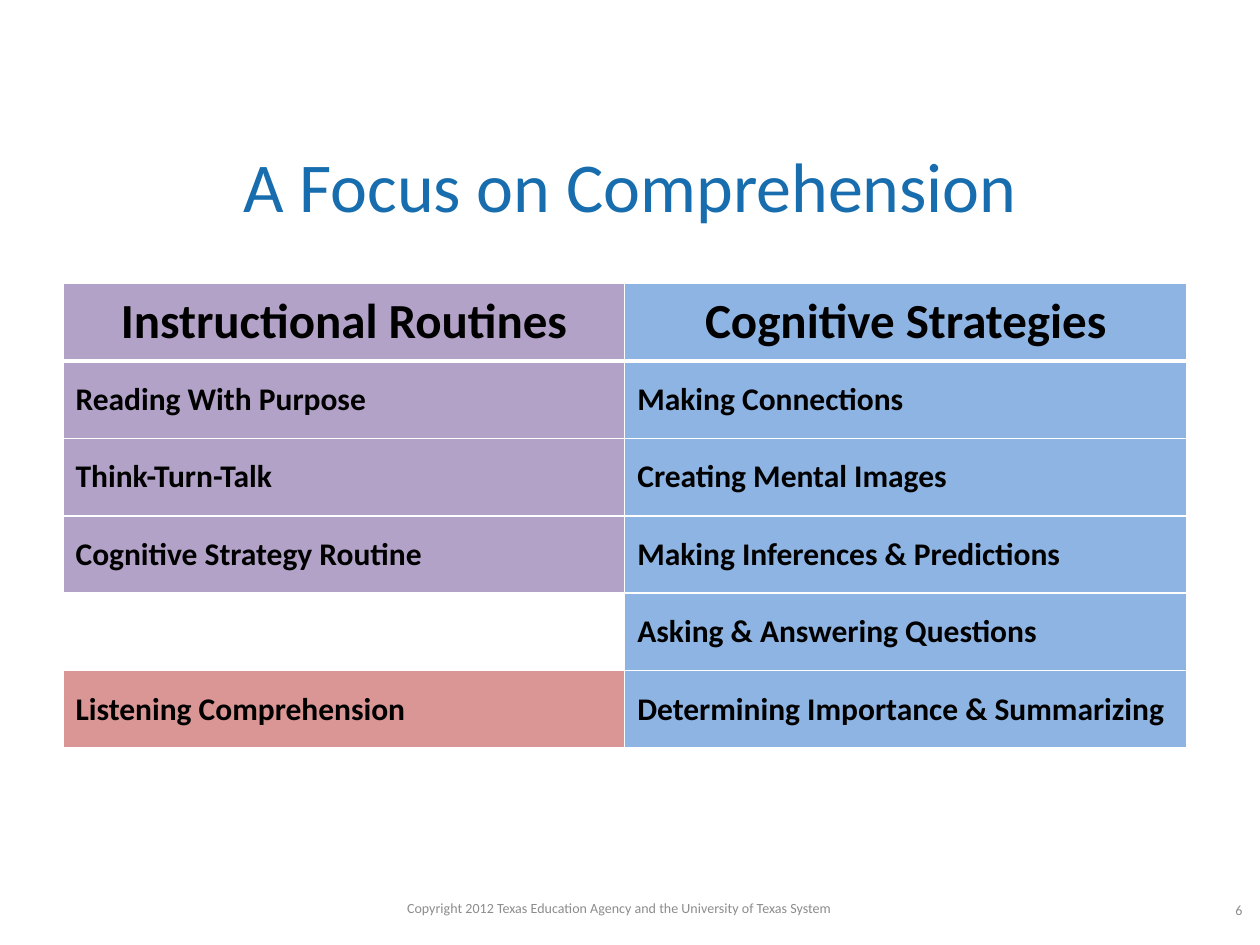
from dataclasses import dataclass

from lxml import etree
from pptx import Presentation, util as u
from pptx.dml.color import RGBColor
from pptx.enum import text
from pptx.oxml import ns

FONT = "Calibri"
COLORS = {
    "title": "176DAD", "footer": "8C8C8C", "ink": "000000", "border": "FFFFFF",
    "routine": "B3A2C7", "strategy": "8EB4E3", "listening": "D99694",
}
TABLE_LEFT, TABLE_TOP, COL_WIDTH, ROW_HEIGHT = 48, 216, 428, 59


@dataclass
class Label:
    words: str
    x: int
    y: int
    w: int
    h: int
    size: int
    color: str


@dataclass
class Entry:
    words: str
    fill: str = ""


LABELS = [
    Label("A Focus on Comprehension", 48, 100, 864, 81, 40, "title"),
    Label("Copyright 2012 Texas Education Agency and the University of Texas System",
          200, 680, 544, 24, 8, "footer"),
    Label("6", 920, 680, 48, 26, 8, "footer"),
]
ROUTINES = [
    Entry("Instructional Routines", "routine"),
    Entry("Reading With Purpose", "routine"),
    Entry("Think-Turn-Talk", "routine"),
    Entry("Cognitive Strategy Routine", "routine"),
    Entry(""),
    Entry("Listening Comprehension", "listening"),
]
STRATEGIES = [Entry(words, "strategy") for words in (
    "Cognitive Strategies",
    "Making Connections",
    "Creating Mental Images",
    "Making Inferences & Predictions",
    "Asking & Answering Questions",
    "Determining Importance & Summarizing",
)]


def px(n: int) -> int:
    return u.Emu(n * 9525)


def rgb(name: str) -> RGBColor:
    return RGBColor.from_string(COLORS[name])


def set_text(tf, words: str, size: int, color: str, bold: bool, align) -> None:
    tf.text = words
    p = tf.paragraphs[0]
    p.alignment = align
    for r in p.runs:
        r.font.name = FONT
        r.font.size = u.Pt(size)
        r.font.bold = bold
        r.font.color.rgb = rgb(color)


def add_label(s, label: Label) -> None:
    tf = s.shapes.add_textbox(px(label.x), px(label.y), px(label.w), px(label.h)).text_frame
    tf.word_wrap = True
    tf.vertical_anchor = text.MSO_ANCHOR.MIDDLE
    set_text(tf, label.words, label.size, label.color, False, text.PP_ALIGN.CENTER)


def add_borders(cell, bottom: int) -> None:
    """Draw the four cell edges; they must precede the fill in the cell's XML."""
    props = cell._tc.get_or_add_tcPr()
    for i, (side, width) in enumerate((("L", 1), ("R", 1), ("T", 1), ("B", bottom))):
        line = etree.Element(ns.qn(f"a:ln{side}"), w=str(u.Pt(width)))
        fill = etree.SubElement(line, ns.qn("a:solidFill"))
        etree.SubElement(fill, ns.qn("a:srgbClr"), val=COLORS["border"])
        props.insert(i, line)


def fill_cell(cell, entry: Entry, header: bool) -> None:
    cell.vertical_anchor = text.MSO_ANCHOR.MIDDLE
    if entry.fill:
        cell.fill.solid()
        cell.fill.fore_color.rgb = rgb(entry.fill)
    else:
        cell.fill.background()
    align = text.PP_ALIGN.CENTER if header else text.PP_ALIGN.LEFT
    set_text(cell.text_frame, entry.words, 28 if header else 18, "ink", True, align)
    add_borders(cell, 3 if header else 1)


def add_comparison(s, columns: list[list[Entry]]) -> None:
    rows = len(columns[0])
    table = s.shapes.add_table(
        rows, len(columns), px(TABLE_LEFT), px(TABLE_TOP),
        px(COL_WIDTH * len(columns)), px(ROW_HEIGHT * rows)).table
    table.horz_banding = False
    for c, entries in enumerate(columns):
        table.columns[c].width = px(COL_WIDTH)
        for r, entry in enumerate(entries):
            fill_cell(table.cell(r, c), entry, r == 0)


def main() -> None:
    prs = Presentation()
    prs.slide_width, prs.slide_height = px(960), px(720)
    s = prs.slides.add_slide(prs.slide_layouts[6])
    for label in LABELS:
        add_label(s, label)
    add_comparison(s, [ROUTINES, STRATEGIES])
    prs.save("out.pptx")


if __name__ == "__main__":
    main()
